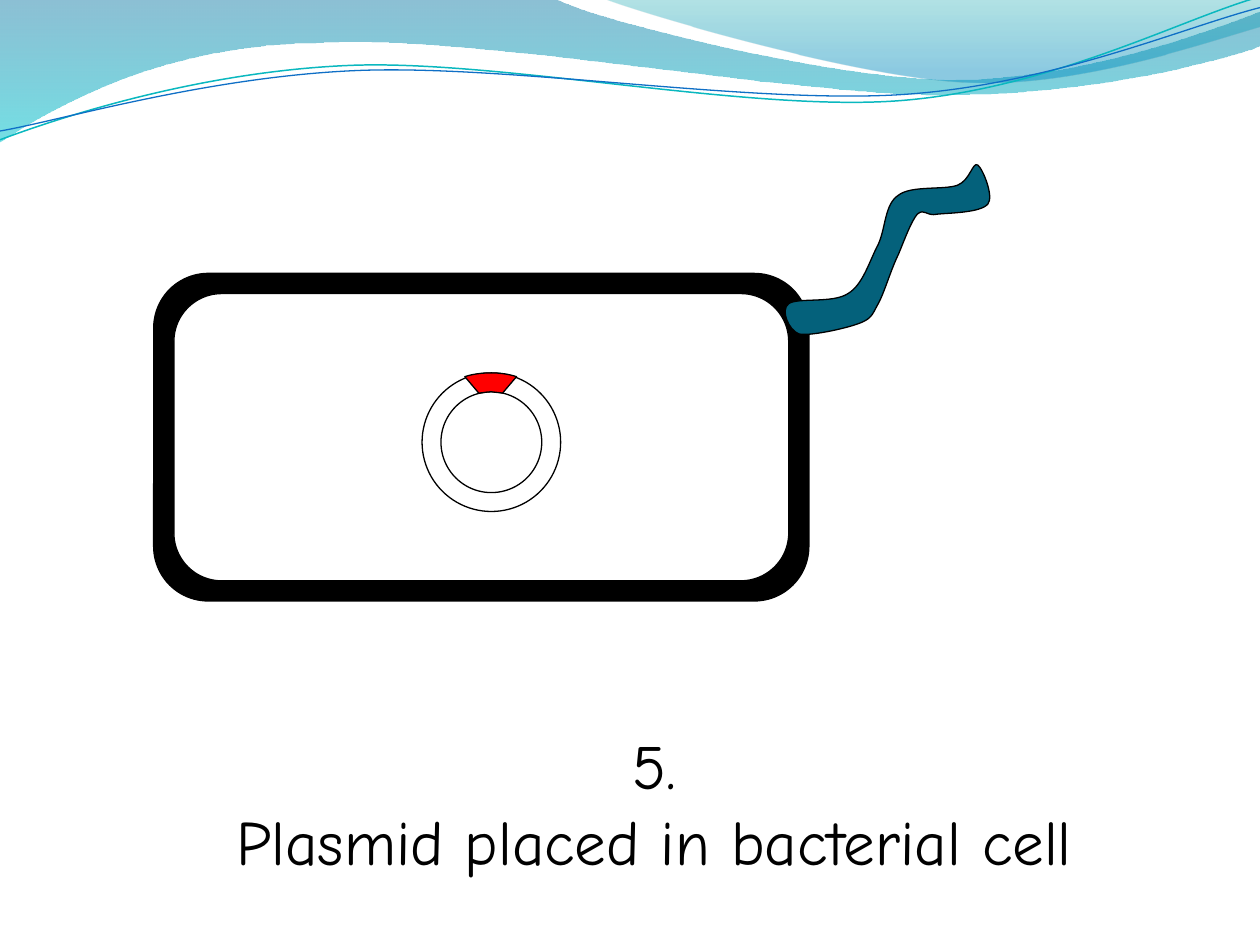
from math import cos, radians, sin

from lxml import etree
from pptx import Presentation
from pptx.dml.color import RGBColor
from pptx.enum.shapes import MSO_SHAPE
from pptx.enum.text import MSO_AUTO_SIZE, PP_ALIGN
from pptx.oxml.ns import qn
from pptx.util import Inches, Pt

ROUNDED, OVAL = MSO_SHAPE.ROUNDED_RECTANGLE, MSO_SHAPE.OVAL
CENTER = PP_ALIGN.CENTER
FIT_TEXT = MSO_AUTO_SIZE.SHAPE_TO_FIT_TEXT

SLIDE_W, SLIDE_H = 10, 7.5
BLANK_LAYOUT = 6
WAVE_TILT = -2.7
CELL_CENTER = (3.82, 3.47)
PLASMID_CENTER = (3.9, 3.51)

COLORS = {
    "black": "000000", "white": "FFFFFF", "gene": "FF0000", "flagellum": "04617B",
    "wave_teal": "0AB8BF", "wave_blue": "0F6FC6",
    "deep_blue": "0074A1", "aqua": "00C6CF", "teal": "00A1A9", "sky": "008BBF",
}

# Frames in inches: left, top, width, height
LEFT_BAND_FRAME = (-0.01, -0.01, 10.02, 1.14)
RIGHT_BAND_FRAME = (4.79, -0.01, 5.21, 0.7)
TEAL_WAVE_FRAME = (-0.02, 0.22, 10.02, 0.71)
BLUE_WAVE_FRAME = (-0.02, 0.3, 10.03, 0.58)
GENE_FRAME = (3.46, 2.96, 0.86, 0.54)
FLAGELLUM_FRAME = (6.19, 1.28, 1.69, 1.39)

# Outlines in inches: the start point, then line ends (2 numbers) or cubic curves (6)
LEFT_BAND = [
    (0, -0.01), (4.4, -0.01), (4.76, 0.17, 6.64, 0.63, 7.58, 0.63),
    (8.53, 0.63, 9.58, 0.26, 10, 0.09), (10.01, 0.36),
    (9.83, 0.44, 8.7, 0.76, 7.46, 0.75), (6.22, 0.75, 3.82, 0.28, 2.57, 0.34),
    (1.29, 0.35, 0.46, 0.83, -0.01, 1.13), (0, -0.01),
]
RIGHT_BAND = [
    (4.79, -0.01), (5.09, 0.11, 6.82, 0.62, 7.69, 0.65),
    (8.56, 0.69, 9.61, 0.32, 10, 0.21), (10, 0), (4.79, -0.01),
]
TEAL_WAVE = [
    (0, 1.11), (0.48, 0.93, 1.58, 0.57, 2.77, 0.52),
    (3.95, 0.47, 5.93, 0.89, 7.13, 0.8), (8.33, 0.71, 9.38, 0.15, 9.98, -0.02),
]
BLUE_WAVE = [
    (0, 1.04), (0.47, 0.96, 1.64, 0.61, 2.83, 0.56),
    (4.03, 0.51, 5.97, 0.83, 7.17, 0.75), (8.36, 0.67, 9.41, 0.21, 10, 0.06),
]
GENE = [
    (3.8, 3.12), (3.83, 3.12, 3.86, 3.11, 3.9, 3.11),
    (3.93, 3.11, 3.96, 3.12, 3.99, 3.12), (4.1, 2.99),
    (4.04, 2.97, 3.97, 2.96, 3.9, 2.96), (3.82, 2.96, 3.75, 2.97, 3.69, 2.99),
]
FLAGELLUM = [
    (6.26, 2.41), (6.33, 2.36, 6.61, 2.41, 6.73, 2.33),
    (6.85, 2.26, 6.9, 2.07, 6.97, 1.94), (7.03, 1.81, 7.02, 1.62, 7.13, 1.55),
    (7.23, 1.47, 7.49, 1.51, 7.6, 1.47), (7.7, 1.43, 7.72, 1.28, 7.76, 1.31),
    (7.8, 1.34, 7.89, 1.56, 7.84, 1.62), (7.78, 1.69, 7.53, 1.69, 7.44, 1.7),
    (7.35, 1.72, 7.34, 1.65, 7.28, 1.7), (7.23, 1.76, 7.18, 1.9, 7.13, 2.02),
    (7.07, 2.14, 7.02, 2.32, 6.97, 2.41), (6.92, 2.5, 6.92, 2.53, 6.81, 2.57),
    (6.7, 2.61, 6.42, 2.67, 6.34, 2.65), (6.26, 2.62, 6.19, 2.46, 6.26, 2.41),
]


def rgb(name):
    return RGBColor.from_string(COLORS[name])


def style(shape, fill=None, line=None, width=0.75):
    shape.shadow.inherit = False
    if fill:
        shape.fill.solid()
        shape.fill.fore_color.rgb = rgb(fill)
    else:
        shape.fill.background()
    if line:
        shape.line.color.rgb = rgb(line)
        shape.line.width = Pt(width)
    else:
        shape.line.fill.background()


def turn(point, center, degrees):
    dx, dy = point[0] - center[0], point[1] - center[1]
    c, s = cos(radians(degrees)), sin(radians(degrees))
    return center[0] + dx * c - dy * s, center[1] + dx * s + dy * c


def add_outline(shapes, frame, outline, closed=True, tilt=0, **look):
    """Add a freeform that fills the frame, with cubic curves as its path."""
    left, top, width, height = frame
    middle = (left + width / 2, top + height / 2)
    builder = shapes.build_freeform(Inches(left), Inches(top), scale=1.0)
    builder.add_line_segments([(Inches(left + width), Inches(top + height))], close=False)
    shape = builder.convert_to_shape()

    path = next(shape._element.iter(qn("a:path")))
    for placeholder_step in list(path):
        path.remove(placeholder_step)
    for index, segment in enumerate(outline):
        tag = "a:cubicBezTo" if len(segment) == 6 else "a:lnTo" if index else "a:moveTo"
        step = etree.SubElement(path, qn(tag))
        for point in zip(segment[::2], segment[1::2]):
            x, y = turn(point, middle, -tilt)
            etree.SubElement(step, qn("a:pt"),
                             x=str(int(Inches(x - left))), y=str(int(Inches(y - top))))
    if closed:
        etree.SubElement(path, qn("a:close"))
    shape.rotation = tilt
    style(shape, **look)
    return shape


def add_band(shapes, frame, outline, stops):
    """Add a band with a top-to-bottom gradient; stops are position, colour, opacity %."""
    band = add_outline(shapes, frame, outline)
    band.fill.gradient()
    band.fill.gradient_angle = 270
    for stop, (position, color, _) in zip(band.fill.gradient_stops, stops):
        stop.position = position
        stop.color.rgb = rgb(color)
    gradient = band._element.spPr.find(qn("a:gradFill"))
    for node, (_, _, opacity) in zip(gradient.iter(qn("a:srgbClr")), stops):
        etree.SubElement(node, qn("a:alpha"), val=str(opacity * 1000))


def add_centered(shapes, kind, center, size, fill):
    (x, y), (w, h) = center, size
    shape = shapes.add_shape(kind, Inches(x - w / 2), Inches(y - h / 2),
                             Inches(w), Inches(h))
    style(shape, fill, "black")


def add_caption(shapes, lines, box, font_format):
    frame = shapes.add_textbox(*map(Inches, box)).text_frame
    frame.word_wrap = False
    frame.auto_size = FIT_TEXT
    frame.text = "\n".join(lines)
    for paragraph in frame.paragraphs:
        paragraph.alignment = CENTER
        for name, value in font_format.items():
            setattr(paragraph.runs[0].font, name, value)
        paragraph.runs[0].font.color.rgb = rgb("black")


def main():
    deck = Presentation()
    deck.slide_width, deck.slide_height = Inches(SLIDE_W), Inches(SLIDE_H)
    shapes = deck.slides.add_slide(deck.slide_layouts[BLANK_LAYOUT]).shapes

    # Wavy header
    add_band(shapes, LEFT_BAND_FRAME, LEFT_BAND, [(0, "deep_blue", 45), (1, "aqua", 55)])
    add_band(shapes, RIGHT_BAND_FRAME, RIGHT_BAND, [(0, "teal", 30), (0.8, "sky", 45)])
    waves = shapes.add_group_shape().shapes
    for frame, outline, color, width in (
            (TEAL_WAVE_FRAME, TEAL_WAVE, "wave_teal", 0.85),
            (BLUE_WAVE_FRAME, BLUE_WAVE, "wave_blue", 0.75)):
        add_outline(waves, frame, outline, closed=False, tilt=WAVE_TILT,
                    line=color, width=width)

    # Bacterial cell: wall and interior
    cell = shapes.add_group_shape().shapes
    for size, fill in (((5.2, 2.6), "black"), ((4.88, 2.28), "white")):
        add_centered(cell, ROUNDED, CELL_CENTER, size, fill)

    # Plasmid ring with its inserted gene, then the flagellum
    for diameter in (1.1, 0.8):
        add_centered(cell, OVAL, PLASMID_CENTER, (diameter, diameter), "white")
    for frame, outline, fill in ((GENE_FRAME, GENE, "gene"),
                                 (FLAGELLUM_FRAME, FLAGELLUM, "flagellum")):
        add_outline(cell, frame, outline, fill=fill, line="black")

    # Step caption
    add_caption(shapes, ["5.", "Plasmid placed in bacterial cell"],
                (1.54, 5.72, 7.3, 1.3), {"name": "Comic Neue", "size": Pt(36)})

    deck.save("out.pptx")


if __name__ == "__main__":
    main()
